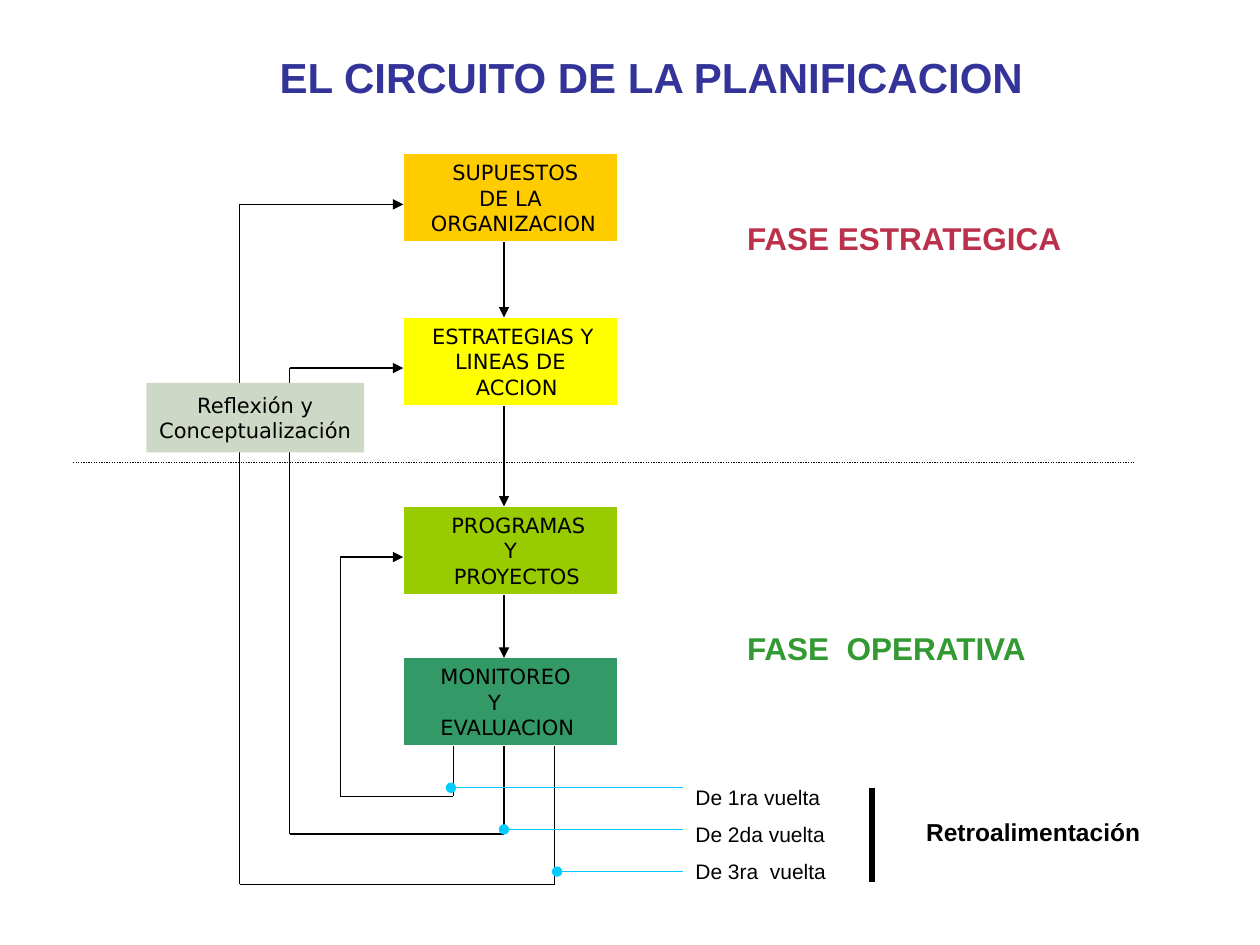
from dataclasses import dataclass
from itertools import pairwise

from lxml.etree import SubElement
from pptx import Presentation
from pptx.dml.color import RGBColor
from pptx.enum.dml import MSO_LINE
from pptx.enum.shapes import MSO_CONNECTOR, MSO_SHAPE
from pptx.enum.text import MSO_ANCHOR, PP_ALIGN
from pptx.oxml.ns import qn
from pptx.util import Cm, Pt

LEFT, WIDE, HIGH, MID = 8.13, 4.32, 1.78, 10.16
PORT = 1.02
BLACK, WHITE, CYAN = "000000", "FFFFFF", "00CCFF"
SANS = "DejaVu Sans"


@dataclass
class Step:
    top: float
    fill: str
    lines: tuple[str, ...]
    shifts: tuple[float, ...]
    align: PP_ALIGN = PP_ALIGN.CENTER


@dataclass
class Loop:
    start: float
    floor: float
    side: float
    goal: Step
    tag: tuple[float, float]


STEPS = [
    Step(3.1, "FFCC00", ("SUPUESTOS", "DE LA", "ORGANIZACION"), (0.2, 0, 0.12)),
    Step(6.4, "FFFF00", ("ESTRATEGIAS Y", "LINEAS DE", "ACCION"), (0.1, 0, 0.26)),
    Step(10.21, "99CC00", ("PROGRAMAS", "Y", "PROYECTOS"), (0.32, 0, 0.26)),
    Step(13.26, "339966", ("MONITOREO", "Y", "EVALUACION"), (0.5, 1.46, 0.5),
         PP_ALIGN.LEFT),
]
LOOPS = [
    Loop(9.14, 16.05, 6.86, STEPS[2], (9.09, 15.88)),
    Loop(MID, 16.81, 5.84, STEPS[1], (MID, 16.72)),
    Loop(11.18, 17.83, 4.83, STEPS[0], (11.23, 17.57)),
]


def tint(code: str) -> RGBColor:
    """Turn a hex string into a colour."""
    return RGBColor.from_string(code)


def write(shape, lines, *, font="Arial", size=12, color=BLACK, bold=False,
          align=PP_ALIGN.LEFT, anchor=MSO_ANCHOR.TOP, wrap=True, gap=0, shifts=()):
    """Fill a shape with one paragraph per line."""
    frame = shape.text_frame
    frame.word_wrap, frame.vertical_anchor = wrap, anchor
    for num, line in enumerate(lines):
        para = frame.add_paragraph() if num else frame.paragraphs[0]
        para.alignment, para.space_after = align, Pt(gap)
        if shifts:
            para._p.get_or_add_pPr().set("marL", str(Cm(shifts[num])))
        run = para.add_run()
        run.text = line
        run.font.name, run.font.size, run.font.bold = font, Pt(size), bold
        run.font.color.rgb = tint(color)


def box(slide, x: float, y: float, w: float, h: float, fill="", edge=""):
    """Draw a flat rectangle."""
    shape = slide.shapes.add_shape(MSO_SHAPE.RECTANGLE, Cm(x), Cm(y), Cm(w), Cm(h))
    shape.shadow.inherit = False
    if fill:
        shape.fill.solid()
        shape.fill.fore_color.rgb = tint(fill)
    else:
        shape.fill.background()
    if edge:
        shape.line.color.rgb = tint(edge)
        shape.line.width = Pt(0.75)
    else:
        shape.line.fill.background()
    return shape


def label(slide, x: float, y: float, w: float, h: float, *lines: str, **style):
    """Place a text box."""
    write(slide.shapes.add_textbox(Cm(x), Cm(y), Cm(w), Cm(h)), lines, **style)


def link(slide, a, b, color=BLACK, width=0.75, tip="", dash=None):
    """Draw a straight line from a to b with an optional tip."""
    line = slide.shapes.add_connector(MSO_CONNECTOR.STRAIGHT, *map(Cm, (*a, *b)))
    line.line.color.rgb = tint(color)
    line.line.width = Pt(width)
    if dash:
        line.line.dash_style = dash
    if tip:
        SubElement(line.line._get_or_add_ln(), qn("a:tailEnd"), type=tip)
    SubElement(line._element.spPr, qn("a:effectLst"))


def trace(slide, loop: Loop):
    """Draw a feedback loop that ends in an arrow."""
    port = loop.goal.top + PORT
    spots = [(loop.start, STEPS[-1].top + HIGH), (loop.start, loop.floor),
             (loop.side, loop.floor), (loop.side, port), (LEFT, port)]
    for a, b in pairwise(spots):
        link(slide, a, b, tip="triangle" if b == spots[-1] else "")


def main():
    """Build the slide."""
    deck = Presentation()
    deck.slide_width, deck.slide_height = Cm(25.4), Cm(19.05)
    slide = deck.slides.add_slide(deck.slide_layouts[6])

    for step in STEPS:
        shape = box(slide, LEFT, step.top, WIDE, HIGH, step.fill, WHITE)
        write(shape, step.lines, font=SANS, align=step.align, shifts=step.shifts)
    for a, b in pairwise(STEPS):
        link(slide, (MID, a.top + HIGH), (MID, b.top), tip="triangle")
    for loop in LOOPS:
        trace(slide, loop)

    label(slide, 1.7, 0.92, 22.86, 1.27, "EL CIRCUITO DE LA PLANIFICACION",
          size=24, color="333399", bold=True, align=PP_ALIGN.CENTER)
    phase = box(slide, 14.81, 4.29, 9.73, 1.04, edge=WHITE)
    write(phase, ["FASE ESTRATEGICA"], size=18, color="BB314B", bold=True)
    label(slide, 14.81, 12.55, 9.73, 1.02, "FASE  OPERATIVA",
          size=18, color="339933", bold=True)
    link(slide, (1.47, 9.32), (22.86, 9.32), dash=MSO_LINE.ROUND_DOT)

    label(slide, 18.42, 16.34, 6.98, 0.84, "Retroalimentación", size=14, bold=True)
    label(slide, 13.77, 15.7, 4.65, 2.29, "De 1ra vuelta", "De 2da vuelta",
          "De 3ra  vuelta", gap=6.5)
    link(slide, (17.58, 15.88), (17.58, 17.78), width=3)
    for loop in LOOPS:
        link(slide, (13.77, loop.tag[1]), loop.tag, CYAN, tip="oval")

    note = box(slide, 2.95, 7.72, 4.39, 1.4, "CED8C6")
    write(note, ["Reflexión y", "Conceptualización"], font=SANS, wrap=False,
          align=PP_ALIGN.CENTER, anchor=MSO_ANCHOR.MIDDLE)
    deck.save("out.pptx")


if __name__ == "__main__":
    main()
